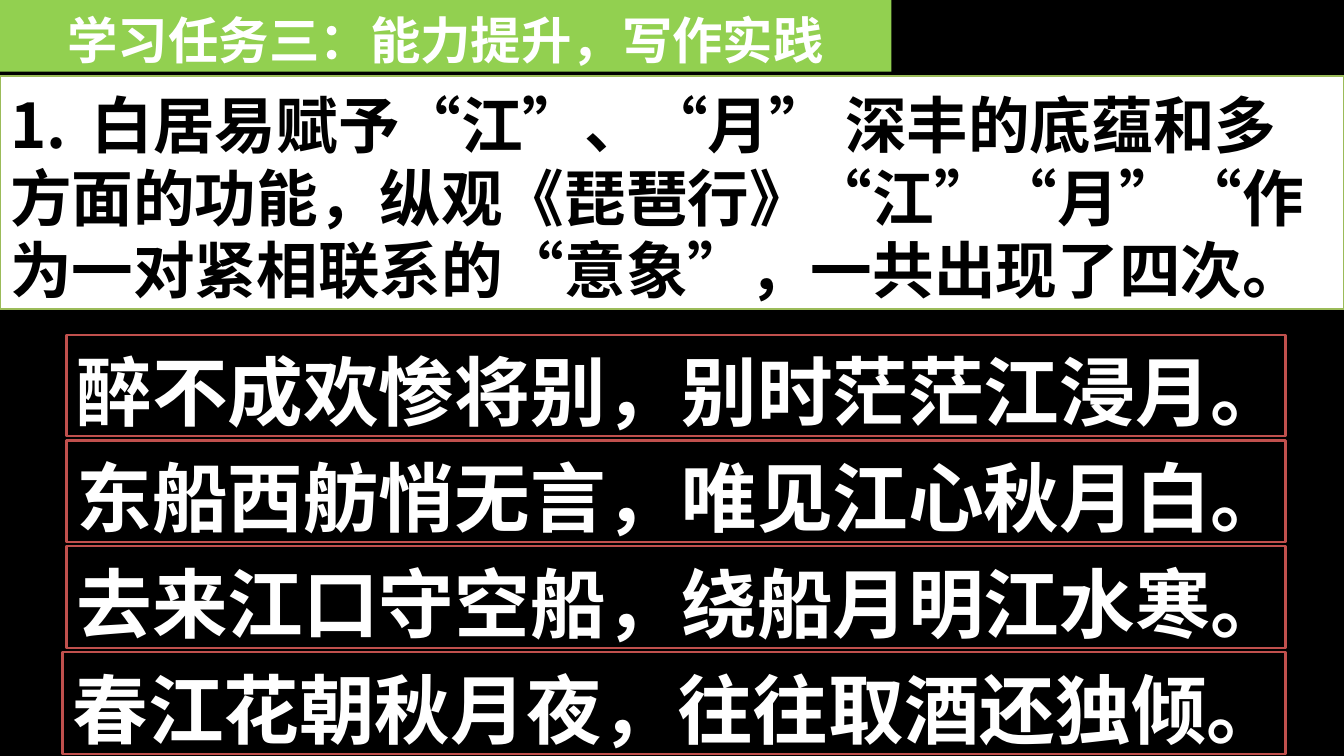
from dataclasses import dataclass
from typing import Optional

from lxml import etree
from pptx import Presentation
from pptx import util as u
from pptx.dml.color import RGBColor
from pptx.enum import lang, shapes, text
from pptx.oxml.ns import qn

EMU_PER_PX = 9144  # 100 px to the inch
CJK_FONT = "Noto Sans CJK SC"
HANGING = 81
BLACK, WHITE = "000000", "FFFFFF"
LIME, OLIVE, RED = "92D050", "9BBB59", "C0504D"


@dataclass
class Panel:
    left: int
    top: int
    width: int
    height: int
    lines: list[str]
    fill: str
    border: Optional[str]
    color: str
    size: int
    leading: int
    font: str = CJK_FONT
    align: text.PP_ALIGN = text.PP_ALIGN.LEFT
    inset_top: int = 0
    numbered: bool = False


def px(n: int) -> int:
    return u.Emu(n * EMU_PER_PX)


def rgb(value: str) -> RGBColor:
    return RGBColor.from_string(value)


def set_bullet(p, numbered: bool) -> None:
    pPr = p._p.get_or_add_pPr()
    pPr.set("marL", str(px(HANGING)))
    pPr.set("indent", str(-px(HANGING)))
    if numbered:
        etree.SubElement(pPr, qn("a:buFont")).set("typeface", "+mj-lt")
        etree.SubElement(pPr, qn("a:buAutoNum")).set("type", "arabicPeriod")
    else:
        etree.SubElement(pPr, qn("a:buNone"))


def style_run(r, panel: Panel) -> None:
    font = r.font
    font.size, font.bold, font.name = u.Pt(panel.size), True, panel.font
    font.color.rgb = rgb(panel.color)
    font.language_id = lang.MSO_LANGUAGE_ID.SIMPLIFIED_CHINESE
    east_asian = etree.Element(qn("a:ea"))
    east_asian.set("typeface", CJK_FONT)
    r._r.rPr.find(qn("a:latin")).addnext(east_asian)


def draw_panel(sp, panel: Panel) -> None:
    sp.left, sp.top = px(panel.left), px(panel.top)
    sp.width, sp.height = px(panel.width), px(panel.height)
    sp.fill.solid()
    sp.fill.fore_color.rgb = rgb(panel.fill)
    if panel.border:
        sp.line.color.rgb = rgb(panel.border)
        sp.line.width = u.Pt(1.5)
    else:
        sp.line.fill.background()

    tf = sp.text_frame
    tf.text = "\n".join(panel.lines)
    tf.word_wrap = True
    tf.auto_size = text.MSO_AUTO_SIZE.NONE
    tf.vertical_anchor = text.MSO_ANCHOR.MIDDLE
    tf.margin_left = tf.margin_right = px(10)
    tf.margin_top, tf.margin_bottom = px(panel.inset_top), 0
    for i, p in enumerate(tf.paragraphs):
        if panel.numbered:
            set_bullet(p, i == 0)
        p.alignment = panel.align
        p.line_spacing = u.Pt(panel.leading)
        p.space_before = u.Pt(0)
        for r in p.runs:
            style_run(r, panel)


def main() -> None:
    prs = Presentation()
    prs.slide_width, prs.slide_height = px(1333), px(750)
    slide = prs.slides.add_slide(prs.slide_layouts[1])
    slide.background.fill.solid()
    slide.background.fill.fore_color.rgb = rgb(BLACK)

    # Heading band
    draw_panel(slide.shapes.title, Panel(
        0, 0, 884, 71, ["学习任务三：能力提升，写作实践"],
        LIME, None, WHITE, 36, 48, align=text.PP_ALIGN.CENTER))

    # Writing prompt
    prompt = ["白居易赋予“江”、“月” 深丰的底蕴和多",
              "方面的功能，纵观《琵琶行》“江”“月”“作",
              "为一对紧相联系的“意象”，一共出现了四次。"]
    draw_panel(slide.placeholders[1], Panel(
        0, 75, 1333, 232, prompt, WHITE, OLIVE, BLACK, 44, 52,
        font="Arial", inset_top=9, numbered=True))

    # Four verses, the last one starting slightly further left
    verses = ["醉不成欢惨将别，别时茫茫江浸月。",
              "东船西舫悄无言，唯见江心秋月白。",
              "去来江口守空船，绕船月明江水寒。",
              "春江花朝秋月夜，往往取酒还独倾。"]
    right, first_top, pitch = 1275, 332, 105
    for i, verse in enumerate(verses):
        left = 62 if i == len(verses) - 1 else 66
        panel = Panel(left, first_top + i * pitch, right - left, 101, [verse],
                      BLACK, RED, WHITE, 54, 72)
        sp = slide.shapes.add_shape(shapes.MSO_SHAPE.RECTANGLE, 0, 0, 0, 0)
        sp.shadow.inherit = False
        draw_panel(sp, panel)

    prs.save("out.pptx")


if __name__ == "__main__":
    main()
